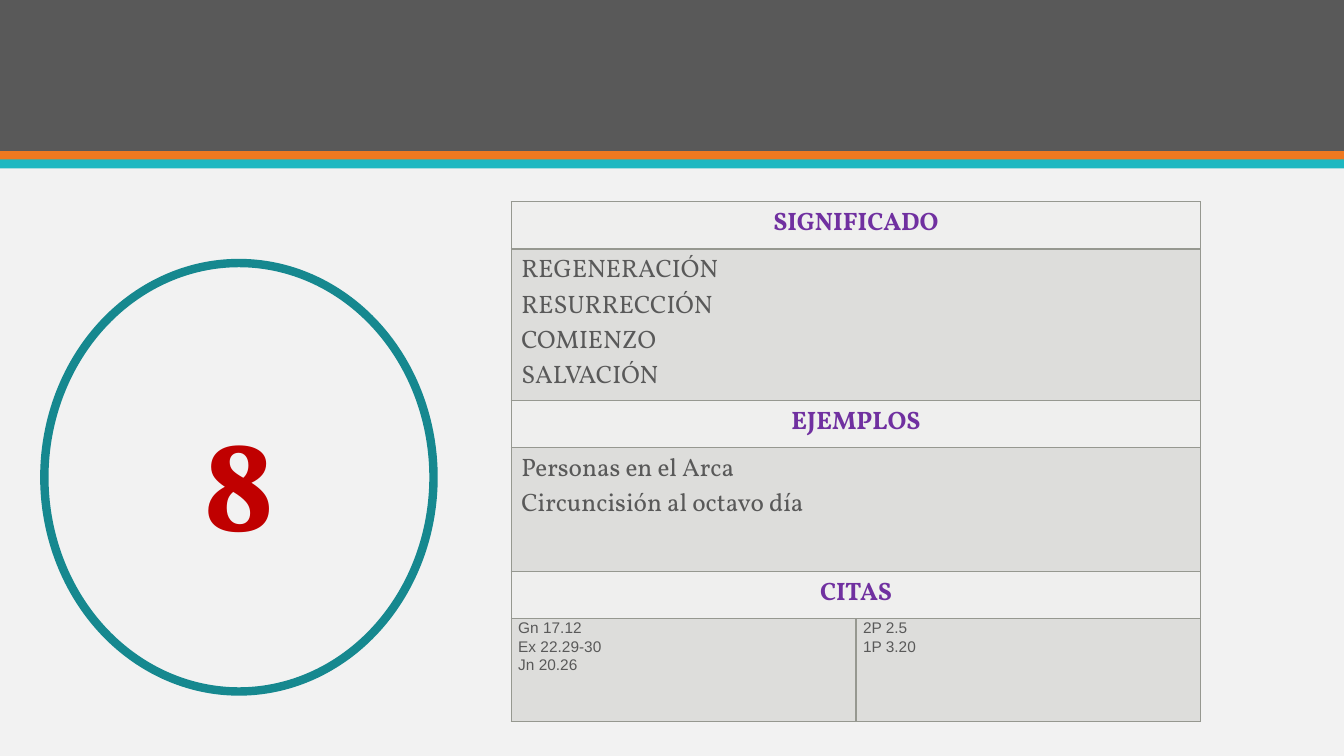
from dataclasses import dataclass

from lxml import etree
from pptx import Presentation
from pptx import util as u
from pptx.dml.color import RGBColor
from pptx.enum import shapes, text
from pptx.oxml.ns import qn
from pptx.slide import Slide
from pptx.table import Table, _Cell
from pptx.text.text import TextFrame

HUES = {
    "paper": "F2F2F2",
    "gray": "595959",
    "orange": "EF7920",
    "aqua": "1EB8C1",
    "teal": "16888F",
    "red": "C00000",
    "purple": "7030A0",
    "light": "EFEFEE",
    "dark": "DDDDDB",
    "edge": "969890",
}
ALIGN = text.PP_ALIGN


@dataclass
class Style:
    font: str
    size: float
    hue: str
    bold: bool = False
    align: text.PP_ALIGN = ALIGN.LEFT
    space: float = 1.0


@dataclass
class Band:
    top: float
    height: float
    hue: str


@dataclass
class Row:
    height: float
    cells: list[str]
    style: Style
    fill: str = "dark"


DIGIT = Style("Vollkorn", 96, "red", True, ALIGN.CENTER)
HEAD = Style("Vollkorn", 18, "purple", True, ALIGN.CENTER)
BODY = Style("Vollkorn", 18, "gray")
CITE = Style("Arial", 11, "gray", align=ALIGN.JUSTIFY, space=1.07)

BANDS = [
    Band(0, 1.5, "gray"),
    Band(1.5, 0.09, "orange"),
    Band(1.58, 0.09, "aqua"),
]
ROWS = [
    Row(0.47, ["SIGNIFICADO"], HEAD, "light"),
    Row(1.5, ["REGENERACIÓN\nRESURRECCIÓN\nCOMIENZO\nSALVACIÓN"], BODY),
    Row(0.47, ["EJEMPLOS"], HEAD, "light"),
    Row(1.23, ["Personas en el Arca\nCircuncisión al octavo día"], BODY),
    Row(0.47, ["CITAS"], HEAD, "light"),
    Row(1.02, ["Gn 17.12\nEx 22.29-30\nJn 20.26", "2P 2.5\n1P 3.20"], CITE),
]


def color(hue: str) -> RGBColor:
    return RGBColor.from_string(HUES[hue])


def write(frame: TextFrame, words: str, style: Style) -> None:
    frame.text = words
    for para in frame.paragraphs:
        para.alignment = style.align
        para.line_spacing = style.space
        para.font.name = style.font
        para.font.size = u.Pt(style.size)
        para.font.bold = style.bold
        para.font.color.rgb = color(style.hue)


def border(cell: _Cell) -> None:
    props = cell._tc.get_or_add_tcPr()
    for spot, side in enumerate(("lnL", "lnR", "lnT", "lnB")):
        line = etree.Element(qn(f"a:{side}"), w=str(u.Pt(1)))
        fill = etree.SubElement(line, qn("a:solidFill"))
        etree.SubElement(fill, qn("a:srgbClr"), val=HUES["edge"])
        props.insert(spot, line)


def draw_band(slide: Slide, band: Band, width: int) -> None:
    bar = slide.shapes.add_shape(
        shapes.MSO_SHAPE.RECTANGLE, 0, u.Inches(band.top), width, u.Inches(band.height)
    )
    bar.shadow.inherit = False
    bar.fill.solid()
    bar.fill.fore_color.rgb = color(band.hue)
    bar.line.fill.background()


def draw_ring(slide: Slide) -> None:
    ring = slide.shapes.add_shape(
        shapes.MSO_SHAPE.OVAL, u.Inches(0.44), u.Inches(2.61), u.Inches(3.86), u.Inches(4.25)
    )
    ring.shadow.inherit = False
    ring.fill.background()
    ring.line.color.rgb = color("teal")
    ring.line.width = u.Pt(6)
    ring.text_frame.vertical_anchor = text.MSO_ANCHOR.MIDDLE
    write(ring.text_frame, "8", DIGIT)


def fill_row(table: Table, index: int, row: Row) -> None:
    table.rows[index].height = u.Inches(row.height)
    cells = list(table.rows[index].cells)
    if len(row.cells) == 1:
        cells[0].merge(cells[1])
    for cell in cells:
        cell.fill.solid()
        cell.fill.fore_color.rgb = color(row.fill)
        border(cell)
    for cell, words in zip(cells, row.cells):
        write(cell.text_frame, words, row.style)
        if row.style is CITE:
            cell.margin_left = cell.margin_right = u.Inches(0.07)
            cell.margin_top = cell.margin_bottom = 0


def draw_table(slide: Slide) -> None:
    height = sum(row.height for row in ROWS)
    frame = slide.shapes.add_table(
        len(ROWS), 2, u.Inches(5.07), u.Inches(2), u.Inches(6.84), u.Inches(height)
    )
    for index, row in enumerate(ROWS):
        fill_row(frame.table, index, row)


def main() -> None:
    deck = Presentation()
    deck.slide_width = u.Inches(13.33)
    deck.slide_height = u.Inches(7.5)
    slide = deck.slides.add_slide(deck.slide_layouts[6])
    slide.background.fill.solid()
    slide.background.fill.fore_color.rgb = color("paper")
    for band in BANDS:
        draw_band(slide, band, deck.slide_width)
    draw_ring(slide)
    draw_table(slide)
    deck.save("out.pptx")


if __name__ == "__main__":
    main()
